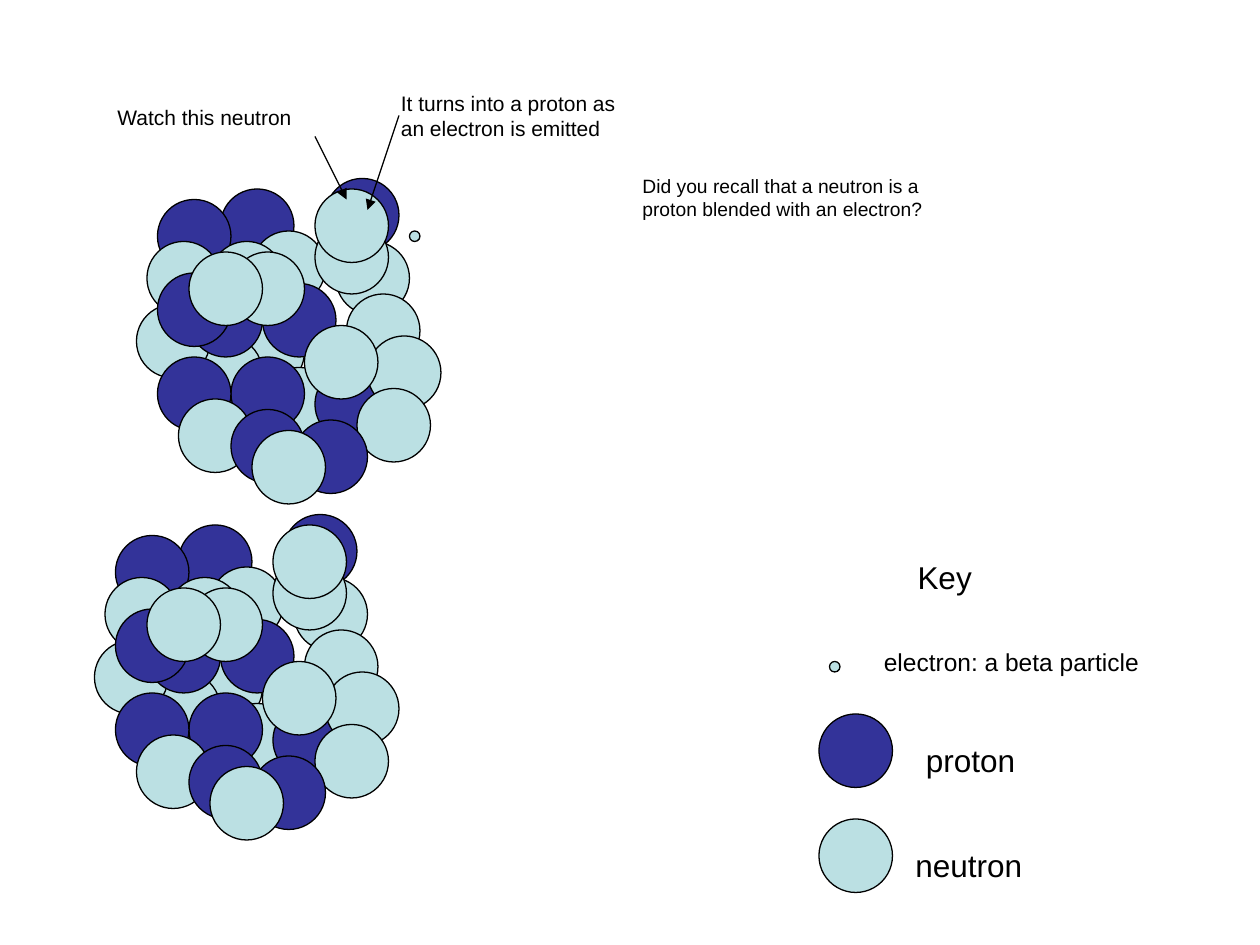
import pptx
import pptx.util
import pptx.dml.color
import pptx.enum.shapes
import pptx.enum.text
import pptx.oxml.ns
import lxml.etree

THEME = {
    "proton": pptx.dml.color.RGBColor(0x33, 0x33, 0x99),
    "neutron": pptx.dml.color.RGBColor(0xBB, 0xE0, 0xE3),
    "electron": pptx.dml.color.RGBColor(0xBB, 0xE0, 0xE3),
    "ink": pptx.dml.color.RGBColor(0, 0, 0),
    "font": "Arial",
    "key_size": 18,
    "electron_size": 14,
    "note_size": 12,
    "question_size": 11,
    "line_width": 0.75,
}
DIAMETERS = {"proton": 7, "neutron": 7, "electron": 1}
GRID = 2.54 / 12  # the slide is laid out on twelfths of an inch


def on_grid(*steps):
    """Turn grid steps into lengths."""
    return [pptx.util.Cm(step * GRID) for step in steps]


def add_label(shapes, text, size, left, top, width, height):
    label = shapes.add_textbox(*on_grid(left, top, width, height))
    frame = label.text_frame
    frame.word_wrap = True
    frame.auto_size = pptx.enum.text.MSO_AUTO_SIZE.SHAPE_TO_FIT_TEXT
    frame.text = text
    font = frame.paragraphs[0].runs[0].font
    font.color.rgb = THEME["ink"]
    for name, value in {"name": THEME["font"], "size": pptx.util.Pt(THEME[size])}.items():
        setattr(font, name, value)


deck = pptx.Presentation()
deck.slide_width, deck.slide_height = pptx.util.Cm(25.4), pptx.util.Cm(19.05)
slide = deck.slides.add_slide(deck.slide_layouts[6])

# Nucleons of one nucleus, from back to front
nucleus = [
    ("proton", 21, 18), ("neutron", 24, 22), ("proton", 15, 19), ("neutron", 20, 23),
    ("proton", 31, 17), ("neutron", 22, 30), ("neutron", 32, 23), ("proton", 25, 27),
    ("neutron", 30, 21), ("neutron", 33, 28), ("neutron", 25, 35), ("neutron", 18, 32),
    ("proton", 30, 35), ("neutron", 35, 32), ("proton", 22, 34), ("neutron", 13, 29),
    ("neutron", 34, 37), ("proton", 15, 34), ("proton", 28, 40), ("neutron", 17, 38),
    ("proton", 22, 39), ("proton", 18, 27), ("neutron", 29, 31), ("neutron", 14, 23),
    ("neutron", 24, 41), ("neutron", 22, 24), ("proton", 15, 26), ("neutron", 30, 18),
    ("neutron", 18, 24),
]
emitted_electron = [("electron", 39, 22)]
second_nucleus = [(kind, left - 4, top + 32) for kind, left, top in nucleus]
key_particles = [("proton", 78, 68), ("neutron", 78, 78), ("electron", 79, 63)]

for kind, left, top in nucleus + emitted_electron + second_nucleus + key_particles:
    diameter = DIAMETERS[kind]
    particle = slide.shapes.add_shape(
        pptx.enum.shapes.MSO_SHAPE.OVAL, *on_grid(left, top, diameter, diameter))
    particle.shadow.inherit = False
    particle.fill.solid()
    particle.fill.fore_color.rgb = THEME[kind]
    particle.line.color.rgb = THEME["ink"]
    particle.line.width = pptx.util.Pt(THEME["line_width"])

# Key and question
for label in [
    ("proton", "key_size", 87, 70, 20, 4.8),
    ("neutron", "key_size", 86, 80, 22, 4.8),
    ("electron: a beta particle", "electron_size", 83, 61, 29, 4),
    ("Did you recall that a neutron is a proton blended with an electron?",
     "question_size", 60, 16, 30, 5.6),
    ("Key", "key_size", 86.2, 52.6, 8, 4.8),
]:
    add_label(slide.shapes, *label)

# Notes, each grouped with its arrow
for text, place, arrow_ends in [
    ("Watch this neutron", (10, 9.4, 21, 3.6), (30, 13, 33, 19)),
    ("It turns into a proton as an electron is emitted", (37, 8, 25, 6), (38, 11, 35, 20)),
]:
    note = slide.shapes.add_group_shape()
    add_label(note.shapes, text, "note_size", *place)
    arrow = note.shapes.add_connector(
        pptx.enum.shapes.MSO_CONNECTOR.STRAIGHT, *on_grid(*arrow_ends))
    arrow.line.color.rgb = THEME["ink"]
    arrow.line.width = pptx.util.Pt(THEME["line_width"])
    lxml.etree.SubElement(
        arrow.line._get_or_add_ln(), pptx.oxml.ns.qn("a:tailEnd"), type="triangle")
    lxml.etree.SubElement(arrow._element.spPr, pptx.oxml.ns.qn("a:effectLst"))

deck.save("out.pptx")
